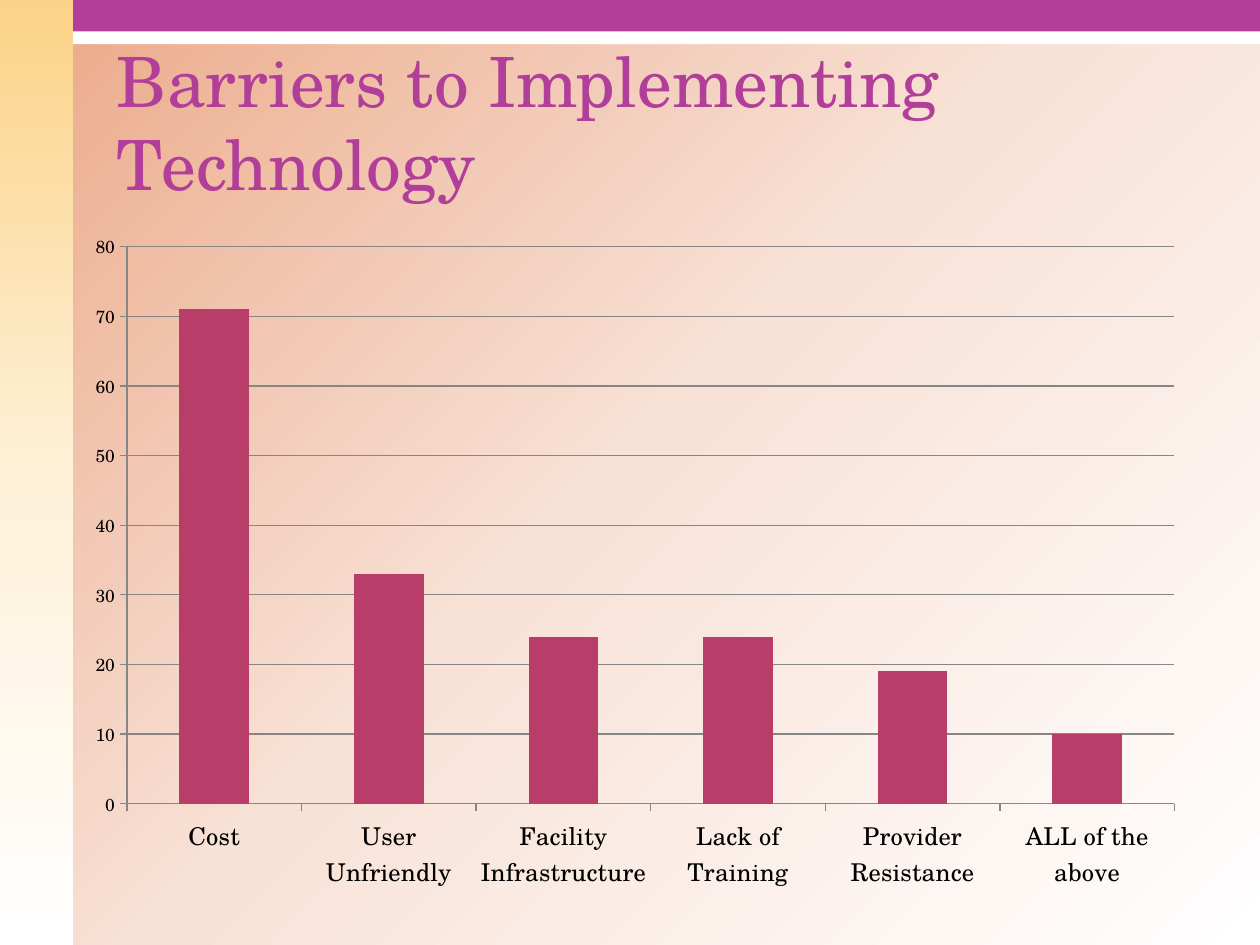
from copy import deepcopy
from pptx import Presentation
from pptx import util as u
from pptx.chart.data import CategoryChartData
from pptx.dml.color import RGBColor
from pptx.enum import chart as ch, shapes, text
from pptx.oxml.ns import qn

FONT = "TeX Gyre Schola"
PLUM, ROSE, GREY = "B13F9A", "B83D68", "868686"
BARRIERS = {
    "Cost": 71,
    "User Unfriendly": 33,
    "Facility Infrastructure": 24,
    "Lack of Training": 24,
    "Provider Resistance": 19,
    "ALL of the above": 10,
}


def paint(fill, color):
    fill.solid()
    fill.fore_color.rgb = RGBColor.from_string(color)


def style(font, size, color):
    font.name, font.size = FONT, u.Pt(size)
    font.color.rgb = RGBColor.from_string(color)


def blend(fill, root, colors, angle):
    """Fill with evenly spaced colours at a clockwise angle."""
    fill.gradient()
    fill.gradient_angle = 360 - angle
    stops = root.find(".//" + qn("a:gsLst"))
    stops.insert(1, deepcopy(stops[0]))
    for i, (stop, color) in enumerate(zip(fill.gradient_stops, colors)):
        stop.color.rgb = RGBColor.from_string(color)
        stop.position = i / (len(colors) - 1)


def band(slide, *box):
    shape = slide.shapes.add_shape(shapes.MSO_SHAPE.RECTANGLE, *map(u.Inches, box))
    shape.shadow.inherit = False
    shape.line.fill.background()
    return shape


def add_title(slide, words):
    box = slide.shapes.add_textbox(*map(u.Inches, (0.83, 0.42, 8.75, 1.25)))
    frame = box.text_frame
    frame.word_wrap = True
    frame.vertical_anchor = text.MSO_ANCHOR.BOTTOM
    frame.text = words
    style(frame.paragraphs[0].font, 39.6, PLUM)


def trim(axis, size):
    axis.major_tick_mark = ch.XL_TICK_MARK.OUTSIDE
    axis.minor_tick_mark = ch.XL_TICK_MARK.NONE
    paint(axis.format.line.fill, GREY)
    style(axis.tick_labels.font, size, "000000")


def add_bars(slide):
    data = CategoryChartData()
    data.categories = list(BARRIERS)
    data.add_series("Series 1", list(BARRIERS.values()))
    chart = slide.shapes.add_chart(
        ch.XL_CHART_TYPE.COLUMN_CLUSTERED,
        *map(u.Inches, (0.58, 1.75, 8.92, 5.42)), data).chart
    chart.has_title = chart.has_legend = False
    style(chart.font, 10, "000000")
    trim(chart.category_axis, 14)
    values = chart.value_axis
    trim(values, 10)
    values.minimum_scale, values.maximum_scale, values.major_unit = 0, 80, 10
    values.has_major_gridlines = True
    paint(values.major_gridlines.format.line.fill, GREY)
    plot = chart.plots[0]
    plot.gap_width, plot.vary_by_categories = 150, False
    paint(plot.series[0].format.fill, ROSE)


def main():
    deck = Presentation()
    deck.slide_width, deck.slide_height = u.Inches(10), u.Inches(7.5)
    slide = deck.slides.add_slide(deck.slide_layouts[6])
    blend(slide.background.fill, slide.element, ("EBA786", "F8E2D7", "FFFFFF"), 45)
    paint(band(slide, 0, 0, 10, 0.35).fill, "FFFFFF")
    side = band(slide, 0, 0, 0.58, 7.5)
    blend(side.fill, side.element, ("FBD388", "FEF0D7", "FFFFFF"), 90)
    paint(band(slide, 0.58, 0, 9.42, 0.25).fill, PLUM)
    add_title(slide, "Barriers to Implementing Technology")
    add_bars(slide)
    deck.save("out.pptx")


if __name__ == "__main__":
    main()
